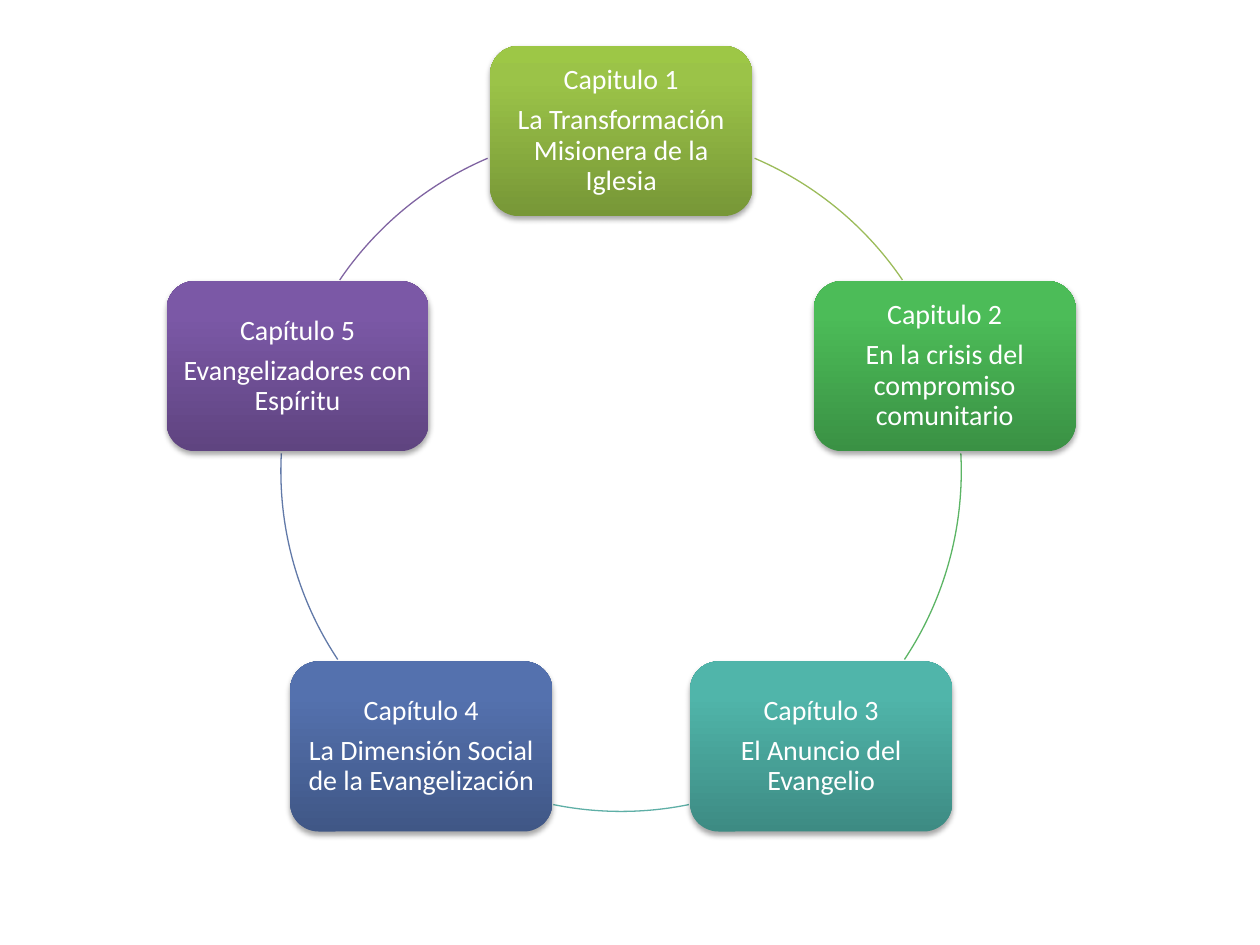
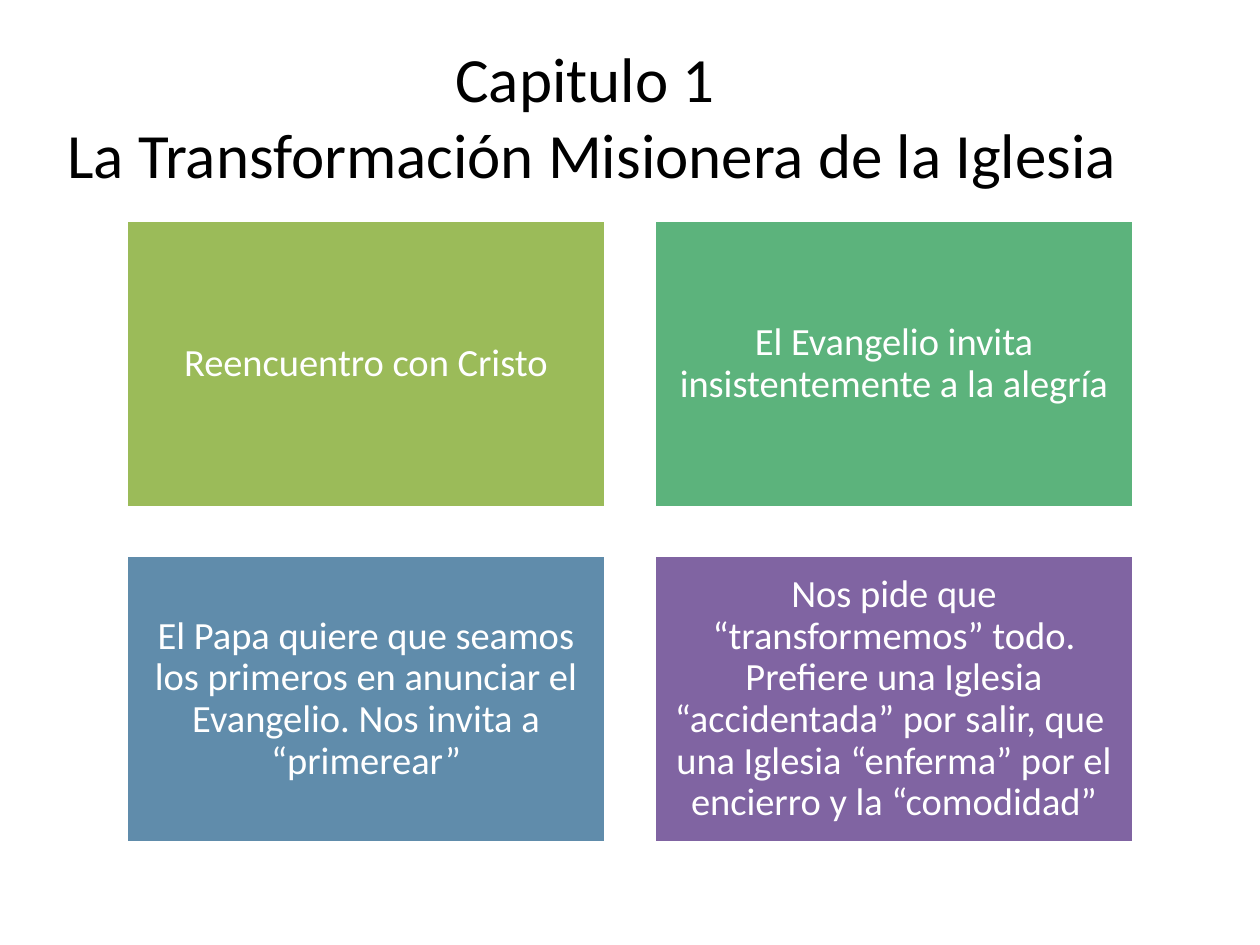
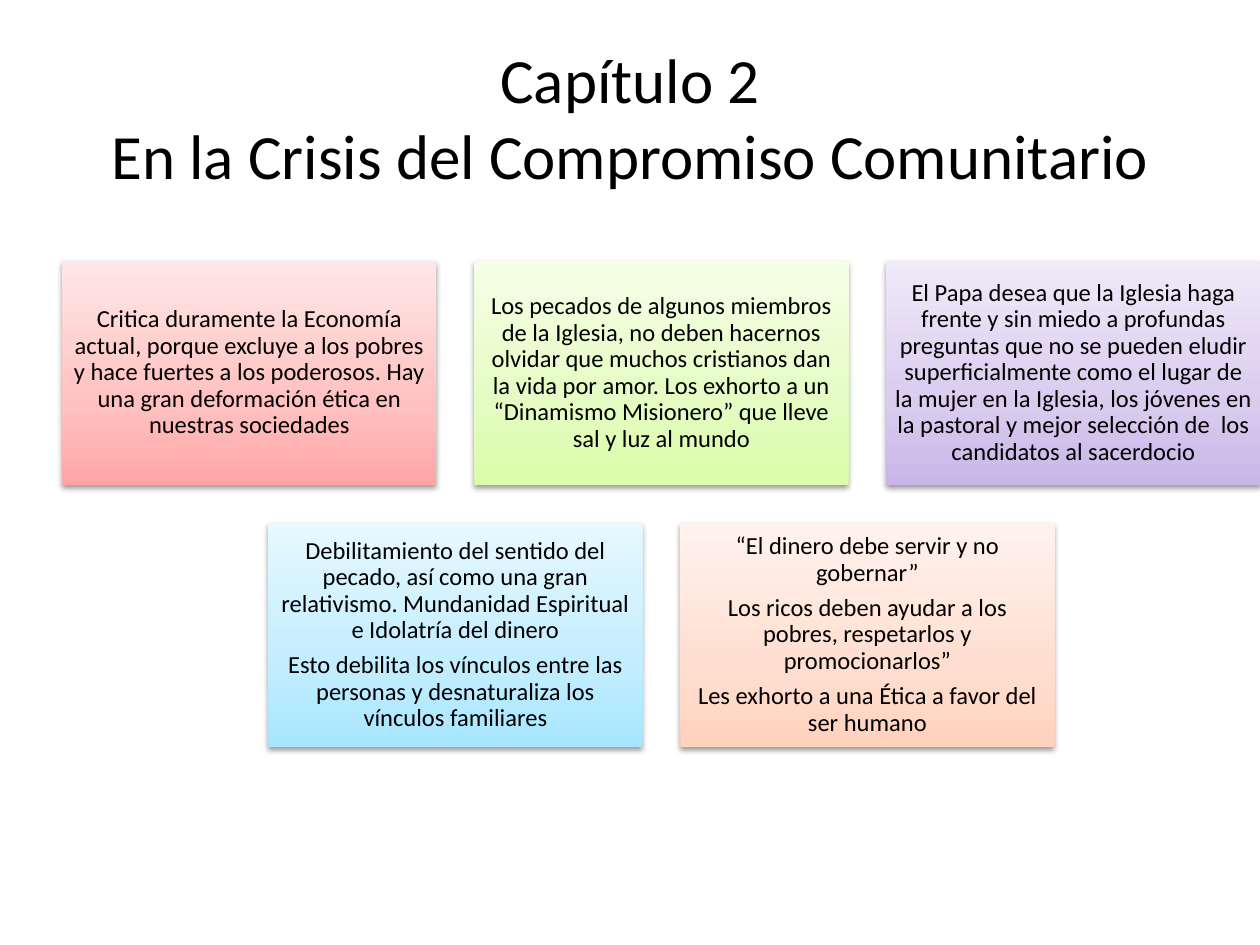
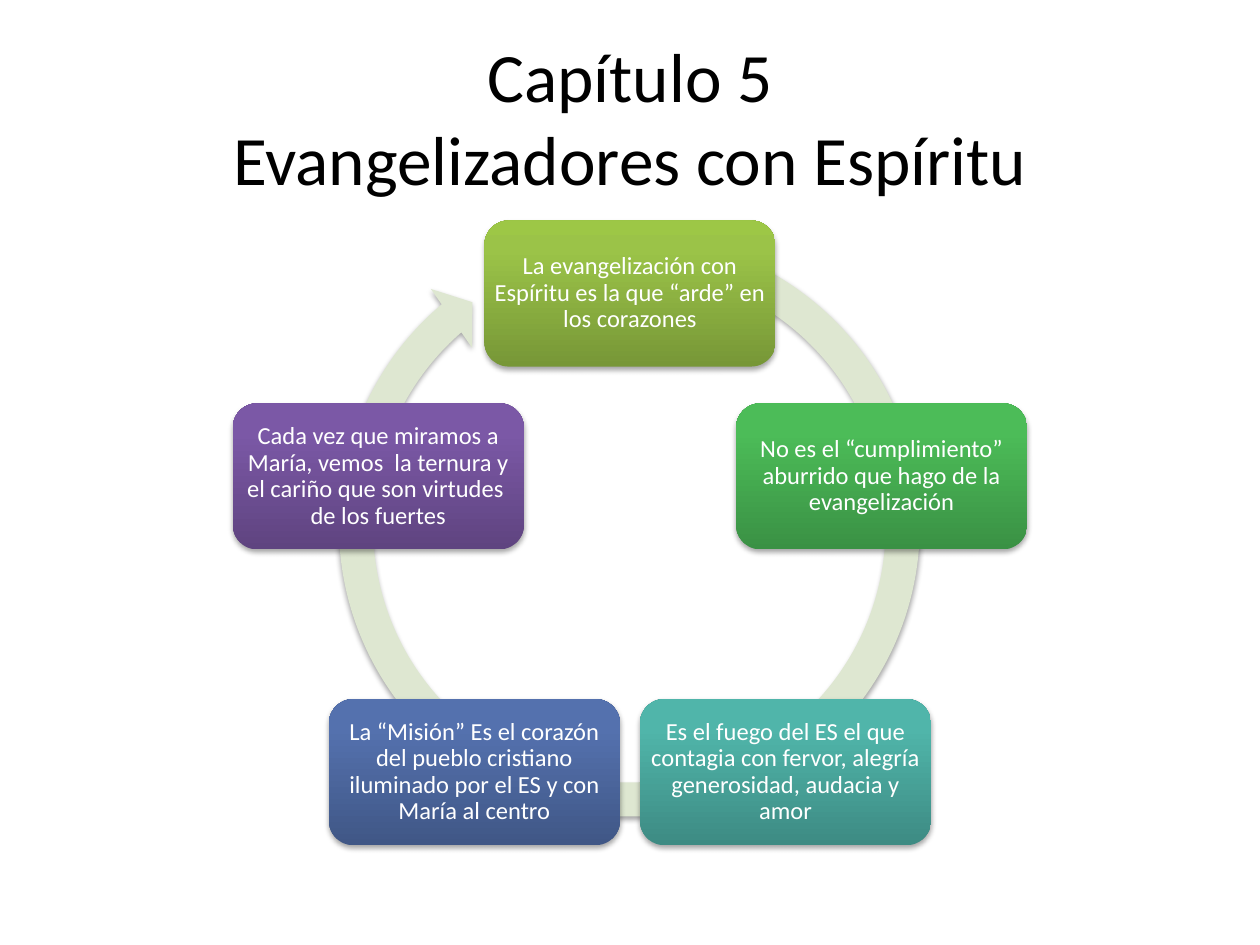
from math import cos, radians, sin

from lxml.etree import SubElement
from pptx import Presentation
from pptx.dml.color import RGBColor
from pptx.enum.shapes import MSO_SHAPE as Shape
from pptx.enum.text import MSO_ANCHOR as Anchor, MSO_AUTO_SIZE as AutoSize, PP_ALIGN as Align
from pptx.oxml.ns import qn
from pptx.util import Inches, Pt

FONT = "Calibri"
BLACK, WHITE = "000000", "FFFFFF"
TITLE_ONLY, BLANK = 5, 6
TITLE_BOX = (0.5, 0.3, 9, 1.25)

# Gradients run from bottom to top
RING_STOPS = (0, 80, 100)
RING_GRADIENTS = [
    ("779737", "9BC348", "9DC746"),
    ("3A9144", "4CBC58", "4ABF57"),
    ("3D8B83", "50B5AA", "4EB8AC"),
    ("405786", "5471AE", "5271B0"),
    ("5F4480", "7B58A6", "7C57A8"),
]
CARD_STOPS = (0, 35, 100)

CHAPTERS = [
    ("Capitulo 1", "La Transformación Misionera de la Iglesia"),
    ("Capitulo 2", "En la crisis del compromiso comunitario"),
    ("Capítulo 3", "El Anuncio del Evangelio"),
    ("Capítulo 4", "La Dimensión Social de la Evangelización"),
    ("Capítulo 5", "Evangelizadores con Espíritu"),
]
# Start angle, end angle (clockwise from the right) and colour
CHAPTER_ARCS = [
    (293.1, 325.8, "9BBB59"),
    (357, 33.6, "5CB565"),
    (78.5, 101.5, "5EAFA6"),
    (146.4, 183, "6179A8"),
    (214.2, 246.9, "8064A2"),
]
MISSION_TILES = [
    ("9BBB59", "Reencuentro con Cristo"),
    ("5CB37C", "El Evangelio invita insistentemente a la alegría"),
    ("608CAB", "El Papa quiere que seamos los primeros en anunciar el Evangelio. "
               "Nos invita a “primerear”"),
    ("8064A2", "Nos pide que “transformemos” todo. Prefiere una Iglesia “accidentada” "
               "por salir, que  una Iglesia “enferma” por el encierro y la “comodidad”"),
]
CRISIS_ROWS = [
    [
        (("FFA6A5", "FFC0BF", "FFE7E7"),
         ["Critica duramente la Economía actual, porque excluye a los pobres y hace "
          "fuertes a los poderosos. Hay una gran deformación ética en nuestras sociedades"]),
        (("DAFDA7", "E4FCC2", "F5FFE7"),
         ["Los pecados de algunos miembros de la Iglesia, no deben hacernos olvidar que "
          "muchos cristianos dan la vida por amor. Los exhorto a un “Dinamismo Misionero” "
          "que lleve sal y luz al mundo"]),
        (("C9B5E8", "D8CBEE", "F0EAF9"),
         ["El Papa desea que la Iglesia haga frente y sin miedo a profundas preguntas que "
          "no se pueden eludir superficialmente como el lugar de la mujer en la Iglesia, "
          "los jóvenes en la pastoral y mejor selección de  los candidatos al sacerdocio"]),
    ],
    [
        (("A7E6FF", "C1EDFF", "E7F8FF"),
         ["Debilitamiento del sentido del pecado, así como una gran relativismo. "
          "Mundanidad Espiritual e Idolatría del dinero",
          "Esto debilita los vínculos entre las personas y desnaturaliza los vínculos "
          "familiares"]),
        (("FFD2BD", "FFDED0", "FFF2ED"),
         ["“El dinero debe servir y no gobernar”",
          "Los ricos deben ayudar a los pobres, respetarlos y promocionarlos”",
          "Les exhorto a una Ética a favor del ser humano"]),
    ],
]
SPIRIT_STEPS = [
    ["La evangelización con Espíritu es la que “arde” en los corazones"],
    ["No es el “cumplimiento” aburrido que hago de la evangelización"],
    ["Es el fuego del ES el que contagia con fervor, alegría generosidad, audacia y amor"],
    ["La “Misión” Es el corazón del pueblo cristiano iluminado por el ES y con María "
     "al centro"],
    ["Cada vez que miramos a María, vemos  la ternura y el cariño que son virtudes  "
     "de los fuertes"],
]


def color(value):
    return RGBColor.from_string(value)


def add_span(para, text, size, ink):
    span = para.add_run()
    span.text = text
    span.font.name = FONT
    span.font.size = Pt(size)
    span.font.color.rgb = color(ink)


def add_block(page, kind, box, fill=None):
    """Preset shape without line or shadow; fill is a hex colour or None."""
    block = page.shapes.add_shape(kind, *map(Inches, box))
    block.shadow.inherit = False
    block.line.fill.background()
    if fill:
        block.fill.solid()
        block.fill.fore_color.rgb = color(fill)
    else:
        block.fill.background()
    return block


def add_gradient(block, stops, colors):
    block.fill.gradient()
    block.fill.gradient_angle = 90
    stop_list = block._element.spPr.find(".//" + qn("a:gsLst"))
    for old_stop in list(stop_list):
        stop_list.remove(old_stop)
    for position, value in zip(stops, colors):
        stop = SubElement(stop_list, qn("a:gs"), pos=str(position * 1000))
        SubElement(stop, qn("a:srgbClr"), val=value)


def add_shadow(block, opacity, distance):
    effects = block._element.spPr.find(qn("a:effectLst"))
    shadow = SubElement(effects, qn("a:outerShdw"), blurRad=str(Pt(3.1)),
                        dist=str(Pt(distance)), dir="5400000", rotWithShape="0")
    tint = SubElement(shadow, qn("a:srgbClr"), val=BLACK)
    SubElement(tint, qn("a:alpha"), val=str(opacity * 1000))


def write_paragraphs(block, texts, size, ink, inset):
    frame = block.text_frame
    frame.word_wrap = True
    frame.vertical_anchor = Anchor.MIDDLE
    frame.margin_left = frame.margin_right = Inches(inset)
    frame.margin_top = frame.margin_bottom = Inches(inset)
    for index, text in enumerate(texts):
        para = frame.add_paragraph() if index else frame.paragraphs[0]
        para.alignment = Align.CENTER
        para.line_spacing = 0.9
        para.space_after = Pt(0.35 * size)
        add_span(para, text, size, ink)


def add_title(page, lines, size=36, box=TITLE_BOX):
    title = page.shapes.title
    title.left, title.top, title.width, title.height = map(Inches, box)
    frame = title.text_frame
    frame.auto_size = AutoSize.NONE
    frame.vertical_anchor = Anchor.MIDDLE
    para = frame.paragraphs[0]
    para.alignment = Align.CENTER
    for index, line in enumerate(lines):
        if index:
            para.add_line_break()
        add_span(para, line, size, BLACK)


def add_ring(page, center, radius, node_size, node_texts, size):
    """Rounded nodes spread evenly clockwise from the top of a circle."""
    width, height = node_size
    for index, (texts, colors) in enumerate(zip(node_texts, RING_GRADIENTS)):
        angle = radians(360 / len(node_texts) * index - 90)
        left = center[0] + radius * cos(angle) - width / 2
        top = center[1] + radius * sin(angle) - height / 2
        node = add_block(page, Shape.ROUNDED_RECTANGLE, (left, top, width, height))
        add_gradient(node, RING_STOPS, colors)
        add_shadow(node, 35, 1.8)
        write_paragraphs(node, texts, size, WHITE, 0)


def add_arcs(page, center, radius):
    box = (center[0] - radius, center[1] - radius, 2 * radius, 2 * radius)
    for start, end, ink in CHAPTER_ARCS:
        arc = add_block(page, Shape.ARC, box)
        # Adjustments count 100000 units, a degree is 60000
        arc.adjustments[0] = start * 0.6
        arc.adjustments[1] = end * 0.6
        arc.line.color.rgb = color(ink)
        arc.line.width = Pt(0.75)


def build_chapters(page):
    center, radius = (4.93, 3.74), 2.7
    add_arcs(page, center, radius)
    add_ring(page, center, radius, (2.08, 1.35), CHAPTERS, 16)


def build_mission(page):
    add_title(page, ["Capitulo 1 ", "La Transformación Misionera de la Iglesia"],
              box=(0.2, 0.29, 9, 1.25))
    left, top, width, height, gap = 1, 1.75, 3.81, 2.28, 0.38
    for index, (fill, text) in enumerate(MISSION_TILES):
        row, column = divmod(index, 2)
        box = (left + column * (width + gap), top + row * (height + gap), width, height)
        tile = add_block(page, Shape.RECTANGLE, box, fill)
        tile.line.color.rgb = color(WHITE)
        tile.line.width = Pt(2)
        write_paragraphs(tile, [text], 22, WHITE, 0.09)


def build_crisis(page):
    add_title(page, ["Capítulo 2", "En la Crisis del Compromiso Comunitario"])
    middle, top, width, height, gap = 5.25, 2.07, 2.97, 1.78, 0.3
    for row, cards in enumerate(CRISIS_ROWS):
        left = middle - (len(cards) * (width + gap) - gap) / 2
        for column, (colors, texts) in enumerate(cards):
            box = (left + column * (width + gap), top + row * (height + gap), width, height)
            card = add_block(page, Shape.RECTANGLE, box)
            add_gradient(card, CARD_STOPS, colors)
            add_shadow(card, 38, 1.6)
            write_paragraphs(card, texts, 14, BLACK, 0.06)


def build_spirit(page):
    add_title(page, ["Capítulo 5", "Evangelizadores con Espíritu"], size=39.6)
    arrow = add_block(page, Shape.CIRCULAR_ARROW, (2.54, 1.72, 4.91, 4.91), "DEE7D1")
    for index, value in enumerate((0.055, 3.307, 137.657, 173.922, 0.058)):
        arrow.adjustments[index] = value
    add_shadow(arrow, 35, 1.8)
    add_ring(page, (5, 4.43), 2.1, (2.31, 1.16), SPIRIT_STEPS, 14)


def main():
    deck = Presentation()
    deck.slide_width, deck.slide_height = Inches(10), Inches(7.5)
    for layout, build in ((BLANK, build_chapters), (TITLE_ONLY, build_mission),
                          (TITLE_ONLY, build_crisis), (TITLE_ONLY, build_spirit)):
        build(deck.slides.add_slide(deck.slide_layouts[layout]))
    deck.save("out.pptx")


if __name__ == "__main__":
    main()
